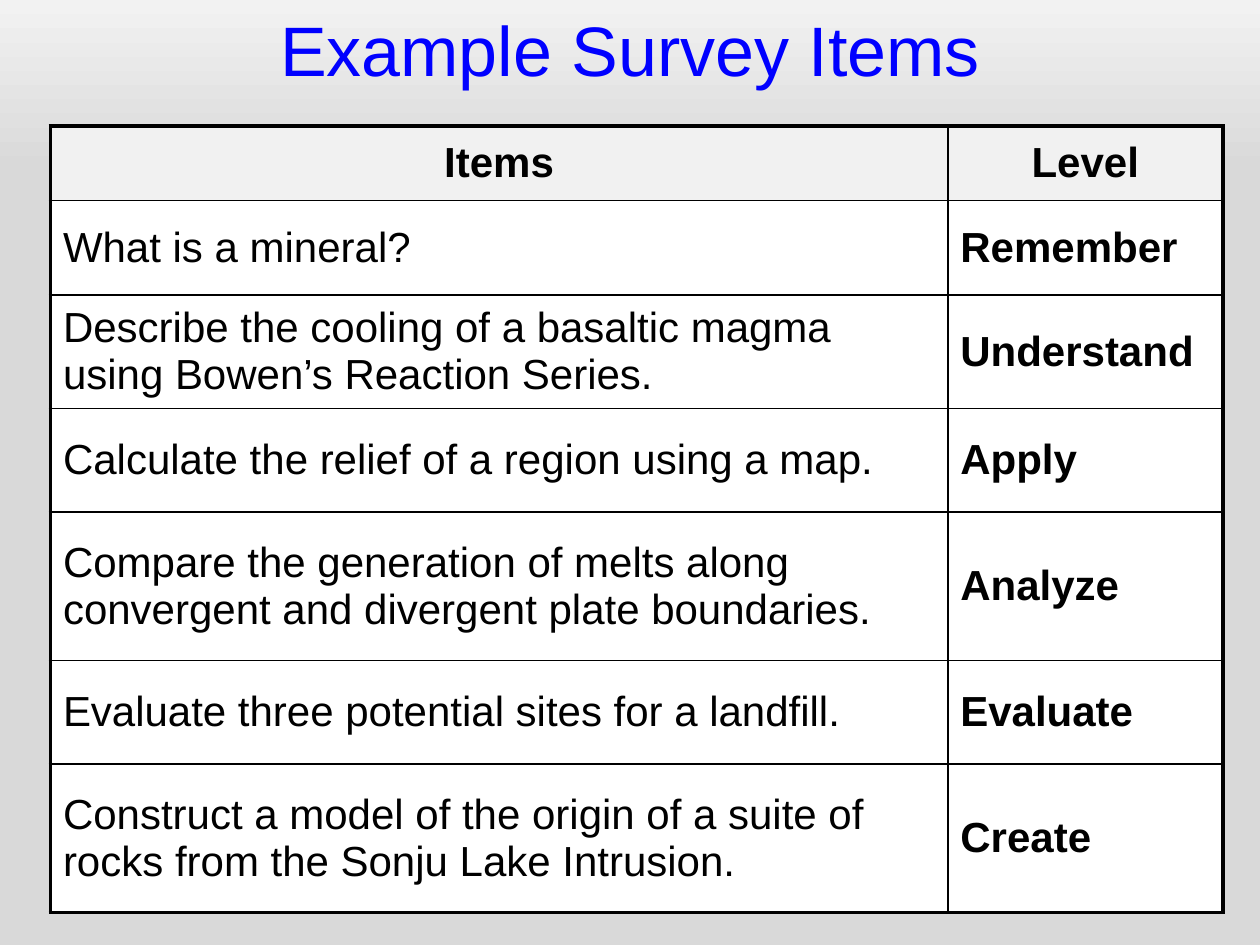
from lxml import etree
from pptx import Presentation
from pptx.dml.color import RGBColor as RGB
from pptx.enum.text import MSO_ANCHOR as Anchor, PP_ALIGN as Align
from pptx.oxml.ns import qn
from pptx.util import Pt

BLUE = RGB(0x00, 0x00, 0xFF)
BLACK = RGB(0x00, 0x00, 0x00)
WHITE = RGB(0xFF, 0xFF, 0xFF)
PALE = RGB(0xF1, 0xF1, 0xF1)
LIGHT = RGB(0xF2, 0xF2, 0xF2)
GREY = RGB(0xD9, 0xD9, 0xD9)

FONT = "Arial"
THICK, THIN = 2.25, 1
WIDTHS = (512.8, 157.2)

# Item, level, row height
ROWS = [
    ("Items", "Level", 42.5),
    ("What is a mineral?", "Remember", 54),
    ("Describe the cooling of a basaltic magma using Bowen’s Reaction Series.",
     "Understand", 64.8),
    ("Calculate the relief of a region using a map.", "Apply", 59.2),
    ("Compare the generation of melts along convergent and divergent plate "
     "boundaries.", "Analyze", 84.8),
    ("Evaluate three potential sites for a landfill.", "Evaluate", 59.2),
    ("Construct a model of the origin of a suite of rocks from the Sonju Lake "
     "Intrusion.", "Create", 84.8),
]


def style(par, text, size, color, bold=False, align=Align.LEFT):
    par.alignment = align
    run = par.add_run()
    run.text = text
    form = {"name": FONT, "size": Pt(size), "bold": bold}
    for key, value in form.items():
        setattr(run.font, key, value)
    run.font.color.rgb = color


def add_back(slide):
    fill = slide.background.fill
    fill.gradient()
    fill.gradient_angle = 270
    for stop, place, color in zip(fill.gradient_stops, (0, 0.18), (LIGHT, GREY)):
        stop.position = place
        stop.color.rgb = color


def add_title(slide, left, top, width, height):
    frame = slide.shapes.add_textbox(
        Pt(left), Pt(top), Pt(width), Pt(height)).text_frame
    frame.word_wrap = True
    style(frame.paragraphs[0], "Example Survey Items", 40, BLUE,
          align=Align.CENTER)


def add_edge(cell, side, width):
    props = cell._tc.get_or_add_tcPr()
    line = etree.SubElement(props, qn(f"a:ln{side}"), w=str(Pt(width)))
    solid = etree.SubElement(line, qn("a:solidFill"))
    etree.SubElement(solid, qn("a:srgbClr"), val=str(BLACK))


def add_items(slide, left, top, width, height):
    table = slide.shapes.add_table(
        len(ROWS), len(WIDTHS), Pt(left), Pt(top), Pt(width), Pt(height)).table
    for col, size in zip(table.columns, WIDTHS):
        col.width = Pt(size)

    last = len(ROWS) - 1
    for r, (*words, tall) in enumerate(ROWS):
        table.rows[r].height = Pt(tall)
        head = r == 0
        for c, text in enumerate(words):
            cell = table.cell(r, c)
            cell.vertical_anchor = Anchor.MIDDLE
            # Thick outer frame, thin inner rules
            outer = {"L": c == 0, "R": c == 1, "T": head, "B": r == last}
            for side, thick in outer.items():
                add_edge(cell, side, THICK if thick else THIN)
            cell.fill.solid()
            cell.fill.fore_color.rgb = PALE if head else WHITE
            style(cell.text_frame.paragraphs[0], text, 24, BLACK,
                  bold=head or c == 1,
                  align=Align.CENTER if head else Align.LEFT)


def main():
    deck = Presentation()
    deck.slide_width, deck.slide_height = Pt(720), Pt(540)
    slide = deck.slides.add_slide(deck.slide_layouts[6])
    add_back(slide)
    add_title(slide, 0, 0, 720, 55.4)
    add_items(slide, 28.8, 72, sum(WIDTHS), sum(row[-1] for row in ROWS))
    deck.save("out.pptx")


if __name__ == "__main__":
    main()
